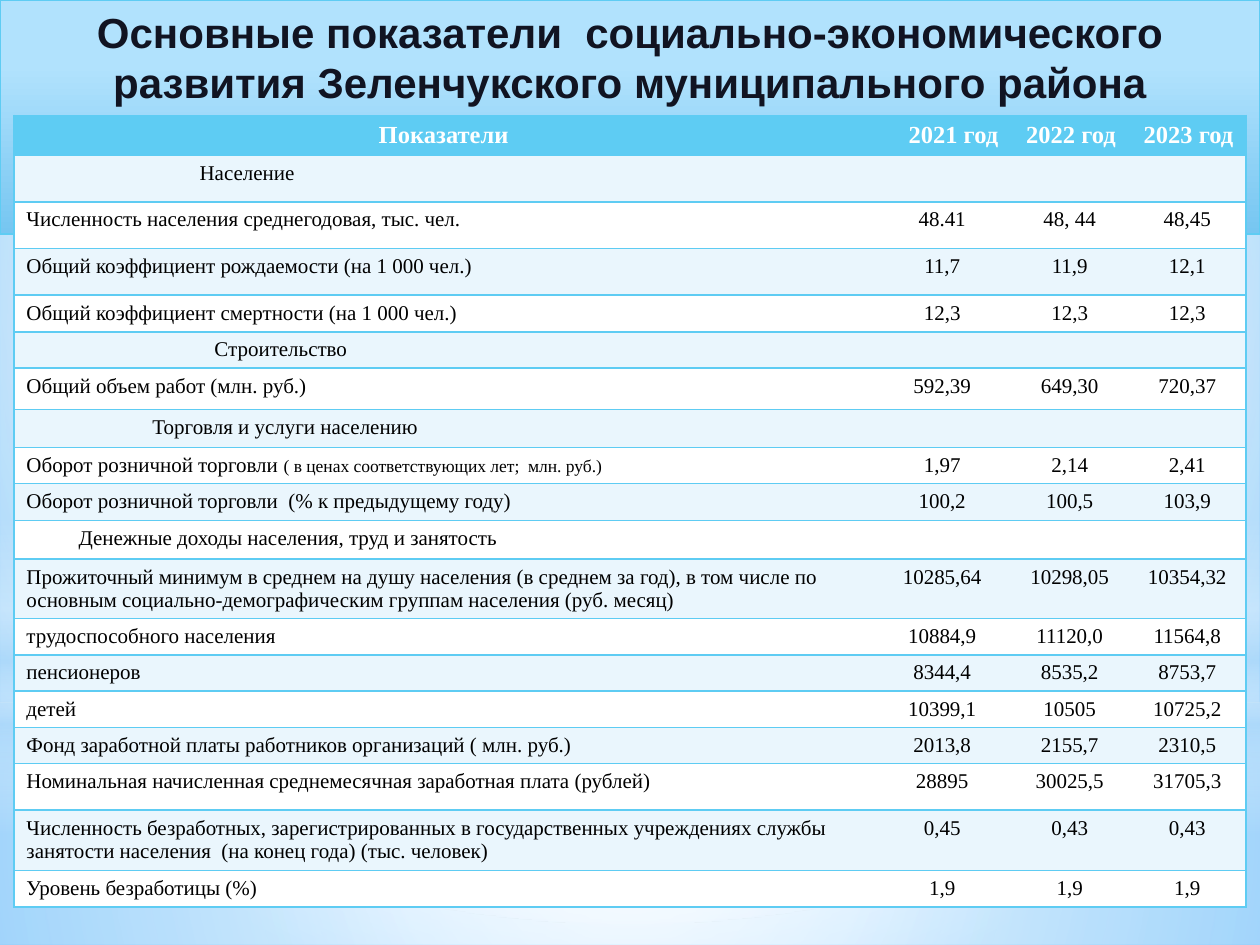
from lxml.etree import SubElement
from pptx import Presentation
from pptx.dml.color import RGBColor
from pptx.enum.shapes import MSO_SHAPE
from pptx.enum.text import MSO_ANCHOR, PP_ALIGN
from pptx.oxml.ns import qn
from pptx.util import Cm, Pt

SKY, PALE, WHITE = "5ECCF3", "EAF6FD", "FFFFFF"
HAZE = "B4DCFA"
SERIF = "Times New Roman"
COL_WIDTHS = [17.33, 2.77, 2.37, 2.37]
HEADER = ["Показатели", "2021 год", "2022 год", "2023 год"]

# Section rows: height, heading, indent. Data rows: height, label, three values.
ROWS = [
    (0.94, "Население", 3.49),
    (0.94, "Численность населения среднегодовая, тыс. чел.", "48.41", "48, 44", "48,45"),
    (0.94, "Общий коэффициент рождаемости (на 1 000 чел.)", "11,7", "11,9", "12,1"),
    (0.74, "Общий коэффициент смертности (на 1 000 чел.)", "12,3", "12,3", "12,3"),
    (0.73, "Строительство", 3.79),
    (0.83, "Общий объем работ (млн. руб.)", "592,39", "649,30", "720,37"),
    (0.77, "Торговля и услуги населению", 2.54),
    (0.73, "Оборот розничной торговли |( в ценах соответствующих лет;  млн. руб.)",
     "1,97", "2,14", "2,41"),
    (0.74, "Оборот розничной торговли  (% к предыдущему году)", "100,2", "100,5", "103,9"),
    (0.78, "Денежные доходы населения, труд и занятость", 1.05),
    (1.2, "Прожиточный минимум в среднем на душу населения (в среднем за год), в том числе по "
     "основным социально-демографическим группам населения (руб. месяц)",
     "10285,64", "10298,05", "10354,32"),
    (0.73, "трудоспособного населения", "10884,9", "11120,0", "11564,8"),
    (0.73, "пенсионеров", "8344,4", "8535,2", "8753,7"),
    (0.73, "детей", "10399,1", "10505", "10725,2"),
    (0.73, "Фонд заработной платы работников организаций ( млн. руб.)",
     "2013,8", "2155,7", "2310,5"),
    (0.94, "Номинальная начисленная среднемесячная заработная плата (рублей)",
     "28895", "30025,5", "31705,3"),
    (1.22, "Численность безработных, зарегистрированных в государственных учреждениях службы "
     "занятости населения  (на конец года) (тыс. человек)", "0,45", "0,43", "0,43"),
    (0.73, "Уровень безработицы (%)", "1,9", "1,9", "1,9"),
]


def rgb(color):
    return RGBColor.from_string(color)


def set_gradient(props, stops, angle=None, focus=(50, 50, 50, 50)):
    """Swap the solid fill in props for a gradient of (position, colour, opacity)."""
    solid = props.find(qn("a:solidFill"))
    grad = props.makeelement(qn("a:gradFill"), {"rotWithShape": "1"})
    props.replace(solid, grad)
    gs_list = SubElement(grad, qn("a:gsLst"))
    for pos, color, opacity in stops:
        gs = SubElement(gs_list, qn("a:gs"), pos=str(pos * 1000))
        clr = SubElement(gs, qn("a:srgbClr"), val=color)
        if opacity < 100:
            SubElement(clr, qn("a:alpha"), val=str(opacity * 1000))
    if angle is not None:
        SubElement(grad, qn("a:lin"), ang=str(angle * 60000), scaled="0")
    else:
        circle = SubElement(grad, qn("a:path"), path="circle")
        sides = {k: str(v * 1000) for k, v in zip("ltrb", focus)}
        SubElement(circle, qn("a:fillToRect"), **sides)


def add_panel(s, kind, top, height, stops, angle=None):
    sp = s.shapes.add_shape(kind, 0, Cm(top), Cm(25.4), Cm(height))
    sp.shadow.inherit = False
    sp.line.fill.background()
    sp.fill.solid()
    set_gradient(sp.element.spPr, stops, angle)
    return sp


def add_run(p, text, size, color, font, bold=False):
    r = p.add_run()
    r.text = text
    r.font.size, r.font.name, r.font.bold = Pt(size), font, bold
    r.font.color.rgb = rgb(color)


def add_background(s):
    s.background.fill.solid()
    set_gradient(s.element.find(".//" + qn("p:bgPr")),
                 [(0, "9ED5FF", 100), (60, WHITE, 100), (100, "5BB9FF", 100)],
                 focus=(20, 10, 20, 60))
    rect = MSO_SHAPE.RECTANGLE
    add_panel(s, rect, 14.17, 4.88, [(0, WHITE, 91), (37, WHITE, 76), (100, HAZE, 79)])
    add_panel(s, rect, 0, 14.17, [(0, WHITE, 89), (48, WHITE, 62), (100, HAZE, 79)])
    add_panel(s, rect, 10.46, 6.35,
              [(0, WHITE, 0), (29, WHITE, 30), (45, HAZE, 40),
               (55, WHITE, 26), (65, HAZE, 60), (100, WHITE, 0)], angle=90)
    add_panel(s, MSO_SHAPE.OVAL, 4.45, 14.17, [(0, WHITE, 100), (56, WHITE, 0)])


def add_title(s):
    sp = add_panel(s, MSO_SHAPE.RECTANGLE, 0, 4.72,
                   [(28, "B1E2FD", 100), (100, "76C6F1", 100)], angle=90)
    sp.line.color.rgb = rgb(SKY)
    sp.line.width = Pt(0.75)
    tf = sp.text_frame
    tf.word_wrap = True
    tf.vertical_anchor = MSO_ANCHOR.TOP
    p = tf.paragraphs[0]
    p.alignment = PP_ALIGN.CENTER
    add_run(p, "Основные показатели  социально-экономического развития "
            "Зеленчукского муниципального района", 24, "111422", "Arial", True)


def style_cell(cell, fill, left, right):
    """Rule every row; draw vertical borders only at the table's outer edges."""
    tc_pr = cell._tc.get_or_add_tcPr()
    for side, shown in (("L", left), ("R", right), ("T", True), ("B", True)):
        ln = SubElement(tc_pr, qn("a:ln" + side), w=str(Pt(1)))
        if shown:
            SubElement(SubElement(ln, qn("a:solidFill")), qn("a:srgbClr"), val=SKY)
        else:
            SubElement(ln, qn("a:noFill"))
    cell.fill.solid()
    cell.fill.fore_color.rgb = rgb(fill)


def write_cell(cell, text, align, size=12, color="000000", bold=False):
    """Write text; whatever follows a bar is set in small type."""
    p = cell.text_frame.paragraphs[0]
    p.alignment = align
    main_text, _, small_text = text.partition("|")
    add_run(p, main_text, size, color, SERIF, bold)
    if small_text:
        add_run(p, small_text, 10, color, SERIF, bold)
    return p


def add_indicators(s):
    heights = [0.79] + [row[0] for row in ROWS]
    tbl = s.shapes.add_table(len(heights), len(COL_WIDTHS), Cm(0.28), Cm(2.33),
                             Cm(sum(COL_WIDTHS)), Cm(sum(heights))).table
    tbl.first_row = tbl.horz_banding = False
    for col, width in zip(tbl.columns, COL_WIDTHS):
        col.width = Cm(width)
    last = len(COL_WIDTHS) - 1
    for i, height in enumerate(heights):
        tbl.rows[i].height = Cm(height)
        fill = SKY if i == 0 else PALE if i % 2 else WHITE
        is_section = i > 0 and len(ROWS[i - 1]) == 3
        for j in range(last + 1):
            style_cell(tbl.cell(i, j), fill, j == 0, j == last or is_section and j == 0)
    # Header
    for j, text in enumerate(HEADER):
        align = PP_ALIGN.RIGHT if j else PP_ALIGN.CENTER
        write_cell(tbl.cell(0, j), text, align, 14, WHITE, True)
    # Sections and data
    for i, (_, label, *values) in enumerate(ROWS, start=1):
        p = write_cell(tbl.cell(i, 0), label, PP_ALIGN.LEFT)
        if len(values) == 1:
            tbl.cell(i, 0).merge(tbl.cell(i, last))
            p._p.get_or_add_pPr().set("marL", str(Cm(values[0])))
            continue
        for j, value in enumerate(values, start=1):
            write_cell(tbl.cell(i, j), value, PP_ALIGN.CENTER)


def main():
    prs = Presentation()
    prs.slide_width, prs.slide_height = Cm(25.4), Cm(19.05)
    s = prs.slides.add_slide(prs.slide_layouts[6])
    add_background(s)
    add_title(s)
    add_indicators(s)
    prs.save("out.pptx")


if __name__ == "__main__":
    main()
